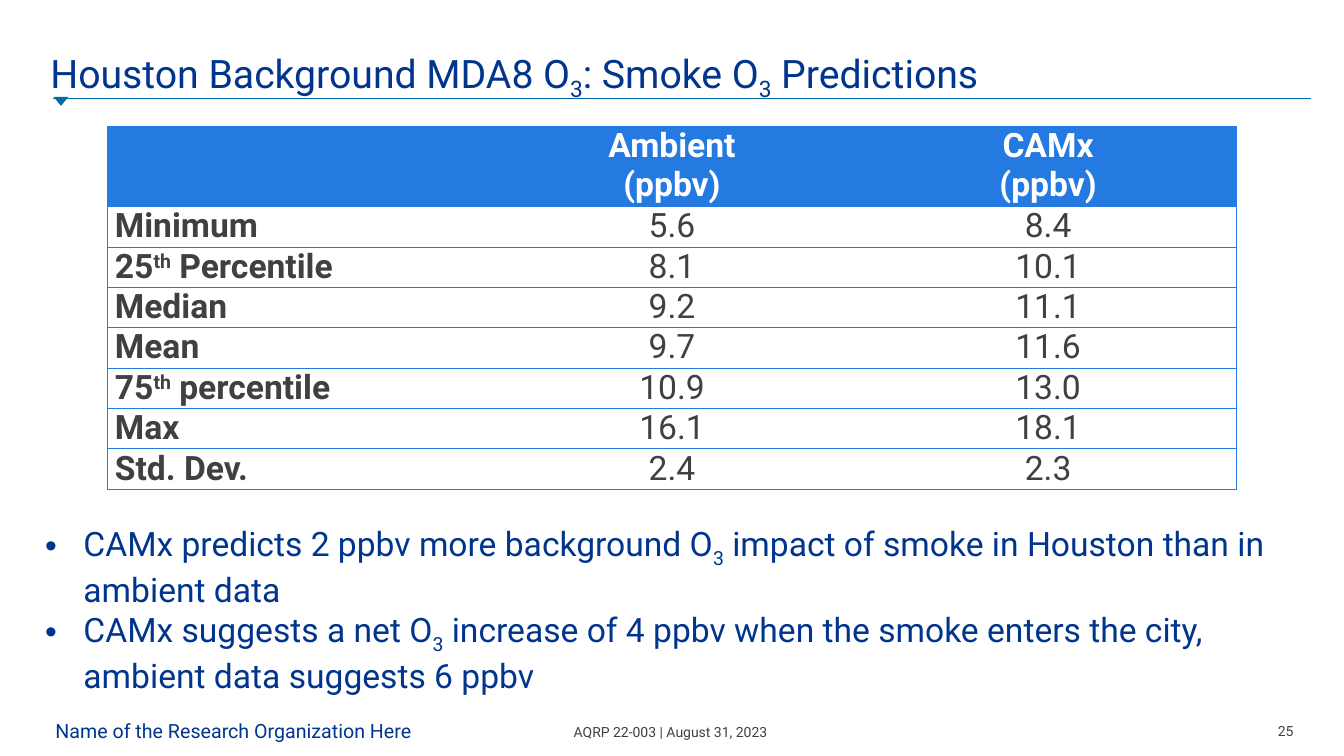
from lxml.etree import SubElement
from pptx import Presentation
from pptx.dml.color import RGBColor
from pptx.enum.shapes import MSO_CONNECTOR, MSO_SHAPE
from pptx.enum.text import MSO_ANCHOR, PP_ALIGN
from pptx.oxml import parse_xml
from pptx.oxml.ns import nsdecls, qn
from pptx.util import Inches, Pt

FONT = "Roboto"
NAVY, GRAY, TEAL, BLUE, WHITE = "00358E", "3F403F", "006BA6", "257AE1", "FFFFFF"
SUB, SUPER = -25000, 30000

HEADERS = ["", "Ambient\n(ppbv)", "CAMx\n(ppbv)"]
STATISTICS = [
    ("Minimum", "5.6", "8.4"),
    ("25~th~ Percentile", "8.1", "10.1"),
    ("Median", "9.2", "11.1"),
    ("Mean", "9.7", "11.6"),
    ("75~th~ percentile", "10.9", "13.0"),
    ("Max", "16.1", "18.1"),
    ("Std. Dev.", "2.4", "2.3"),
]
FINDINGS = [
    "CAMx predicts 2 ppbv more background O~3~ impact of smoke in Houston "
    "than in ambient data",
    "CAMx suggests a net O~3~ increase of 4 ppbv when the smoke enters the "
    "city, ambient data suggests 6 ppbv",
]


def color(hex_string):
    return RGBColor.from_string(hex_string)


def write(p, text, size, hex_color, bold=False, align=PP_ALIGN.LEFT, shift=SUB):
    """Fill a paragraph; pieces between tildes get the baseline shift."""
    p.alignment = align
    for i, piece in enumerate(text.split("~")):
        r = p.add_run()
        r.text = piece
        r.font.name, r.font.size, r.font.bold = FONT, Pt(size), bold
        r.font.color.rgb = color(hex_color)
        if i % 2:
            r.font._element.set("baseline", str(shift))


def add_text_frame(s, box, insets=(0, 0, 0, 0)):
    tf = s.shapes.add_textbox(*map(Inches, box)).text_frame
    tf.word_wrap = True
    tf.margin_left, tf.margin_top, tf.margin_right, tf.margin_bottom = map(Inches, insets)
    return tf


def add_title(s, left, top, width, height, rule_right):
    tf = add_text_frame(s, (left, top, width, height))
    tf.vertical_anchor = MSO_ANCHOR.BOTTOM
    p = tf.paragraphs[0]
    p.line_spacing = 0.8
    write(p, "Houston Background MDA8 O~3~: Smoke O~3~ Predictions", 28, NAVY)

    rule_left, rule_y = left + 0.03, top + height + 0.02
    rule = s.shapes.add_connector(MSO_CONNECTOR.STRAIGHT, *map(
        Inches, (rule_left, rule_y, rule_right, rule_y)))
    rule.line.color.rgb = color(TEAL)
    rule.line.width = Pt(0.75)
    SubElement(rule._element.spPr, qn("a:effectLst"))

    marker = s.shapes.add_shape(MSO_SHAPE.ISOSCELES_TRIANGLE, *map(
        Inches, (rule_left, rule_y - 0.02, 0.15, 0.09)))
    marker.rotation = 180
    marker.shadow.inherit = False
    marker.fill.solid()
    marker.fill.fore_color.rgb = color(TEAL)
    marker.line.fill.background()


def set_borders(cell, sides):
    """Draw the borders named in sides (of L, R, T, B) and clear the others."""
    tc_pr = cell._tc.get_or_add_tcPr()
    for i, side in enumerate("LRTB"):
        fill = (f'<a:solidFill><a:srgbClr val="{BLUE}"/></a:solidFill>'
                if side in sides else "<a:noFill/>")
        tc_pr.insert(i, parse_xml(
            f'<a:ln{side} {nsdecls("a")} w="9525">{fill}</a:ln{side}>'))


def add_statistics_table(s, left, top, width, row_height):
    rows = [HEADERS, *STATISTICS]
    columns = len(HEADERS)
    heights = [2 * row_height] + [row_height] * len(STATISTICS)
    table = s.shapes.add_table(len(rows), columns, *map(
        Inches, (left, top, width, sum(heights)))).table
    table.first_row = table.horz_banding = False
    for row, height in zip(table.rows, heights):
        row.height = Inches(height)
    for i, values in enumerate(rows):
        for j, value in enumerate(values):
            cell = table.cell(i, j)
            cell.margin_left = cell.margin_right = Inches(0.07)
            cell.margin_top = cell.margin_bottom = 0
            cell.fill.solid()
            cell.fill.fore_color.rgb = color(WHITE if i else BLUE)
            set_borders(cell, "TB" + "L" * (j == 0) + "R" * (j == columns - 1))
            tf = cell.text_frame
            for k, line in enumerate(value.split("\n")):
                p = tf.add_paragraph() if k else tf.paragraphs[0]
                write(p, line, 24, GRAY if i else WHITE, bold=i == 0 or j == 0,
                      align=PP_ALIGN.CENTER if j else PP_ALIGN.JUSTIFY, shift=SUPER)


def add_findings(s, box):
    tf = add_text_frame(s, box, (0.1, 0.05, 0.1, 0.05))
    for i, finding in enumerate(FINDINGS):
        p = tf.add_paragraph() if i else tf.paragraphs[0]
        p_pr = p._p.get_or_add_pPr()
        p_pr.set("marL", str(Inches(0.38)))
        p_pr.set("indent", str(Inches(-0.38)))
        SubElement(p_pr, qn("a:buFont"), typeface="Arial")
        SubElement(p_pr, qn("a:buChar"), char="•")
        write(p, finding, 24, NAVY)


def add_footer(s, left, top, right):
    """Organisation at left, project in the middle, page number at right."""
    parts = [
        ((left, top, 4.2, 0.24), "Name of the Research Organization Here", 14, NAVY,
         PP_ALIGN.LEFT, 0.05),
        ((5.08, top + 0.05, 3.14, 0.17), "AQRP 22-003 | August 31, 2023", 10, GRAY,
         PP_ALIGN.CENTER, 0),
        ((right - 0.4, top + 0.04, 0.4, 0.17), "25", 10, GRAY, PP_ALIGN.RIGHT, 0),
    ]
    for box, text, size, hex_color, align, inset in parts:
        tf = add_text_frame(s, box, (inset, 0, 0, 0))
        write(tf.paragraphs[0], text, size, hex_color, align=align)


def main():
    prs = Presentation()
    prs.slide_width, prs.slide_height = Inches(13.33), Inches(7.5)
    s = prs.slides.add_slide(prs.slide_layouts[6])
    add_title(s, 0.5, 0.23, 10, 0.73, rule_right=13)
    add_statistics_table(s, 1.07, 1.25, 11.19, row_height=0.39)
    add_findings(s, (0.35, 5.14, 12.64, 1.72))
    add_footer(s, 0.5, 7.13, right=12.83)
    prs.save("out.pptx")


if __name__ == "__main__":
    main()
